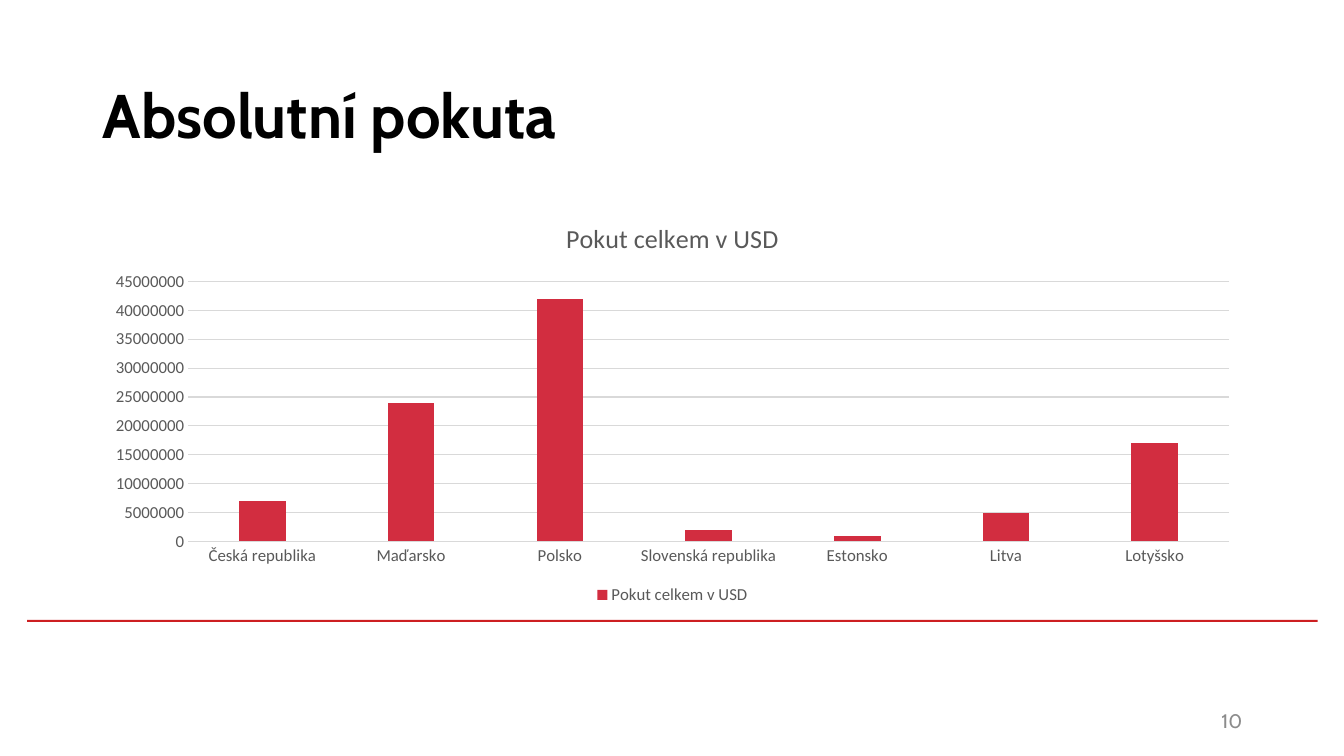
from pptx import Presentation
from pptx import util as u
from pptx.chart import data
from pptx.dml import color
from pptx.enum import chart as kinds, shapes, text

Inches, Pt = u.Inches, u.Pt


def rgb(code):
    return color.RGBColor.from_string(code)


class Deck:
    head, body = "Cabin", "Calibri"
    red, bar = "CD1F21", "D22D40"
    black, gray, pale, grid = "000000", "595959", "8C8C8C", "D9D9D9"

    def __init__(self):
        self.prs = Presentation()
        self.prs.slide_width = Inches(13.33)
        self.prs.slide_height = Inches(7.5)
        self.slide = self.prs.slides.add_slide(self.prs.slide_layouts[6])

    def font(self, font, size, code, name, bold=False):
        font.size, font.name, font.bold = Pt(size), name, bold
        font.color.rgb = rgb(code)

    def stroke(self, line):
        line.color.rgb = rgb(self.grid)
        line.width = Pt(0.75)

    def rule(self, *box):
        rule = self.slide.shapes.add_shape(
            shapes.MSO_SHAPE.RECTANGLE, *map(Inches, box))
        rule.shadow.inherit = False
        rule.fill.solid()
        rule.fill.fore_color.rgb = rgb(self.red)
        rule.line.fill.background()

    def label(self, words, box, size, code, bold=False, align=text.PP_ALIGN.LEFT):
        frame = self.slide.shapes.add_textbox(*map(Inches, box)).text_frame
        frame.word_wrap = True
        frame.vertical_anchor = text.MSO_ANCHOR.MIDDLE
        para = frame.paragraphs[0]
        para.text, para.alignment = words, align
        self.font(para.font, size, code, self.head, bold)

    def columns(self, title, values, box, top, step):
        table = data.CategoryChartData()
        table.categories = list(values)
        table.add_series(title, list(values.values()))
        chart = self.slide.shapes.add_chart(
            kinds.XL_CHART_TYPE.COLUMN_CLUSTERED, *map(Inches, box), table).chart
        self.font(chart.font, 10, self.black, self.body)

        para = chart.chart_title.text_frame.paragraphs[0]
        para.text = title
        self.font(para.font, 18.6, self.gray, self.body)
        chart.chart_title.include_in_layout = False

        chart.has_legend = True
        chart.legend.position = kinds.XL_LEGEND_POSITION.BOTTOM
        chart.legend.include_in_layout = False
        self.font(chart.legend.font, 12, self.gray, self.body)

        for axis in (chart.category_axis, chart.value_axis):
            axis.major_tick_mark = axis.minor_tick_mark = kinds.XL_TICK_MARK.NONE
            self.font(axis.tick_labels.font, 12, self.gray, self.body)
        self.stroke(chart.category_axis.format.line)
        scale = chart.value_axis
        scale.minimum_scale, scale.maximum_scale, scale.major_unit = 0, top, step
        scale.format.line.fill.background()
        scale.has_major_gridlines = True
        self.stroke(scale.major_gridlines.format.line)

        plot = chart.plots[0]
        plot.gap_width, plot.overlap = 219, -27
        plot.vary_by_categories = False
        fill = plot.series[0].format.fill
        fill.solid()
        fill.fore_color.rgb = rgb(self.bar)


def main():
    deck = Deck()
    deck.rule(0.27, 6.15, 12.8, 0.02)
    deck.label("Absolutní pokuta", (0.92, 0.4, 11.5, 1.45), 44, deck.black, bold=True)
    fines = {
        "Česká republika": 7000000,
        "Maďarsko": 24000000,
        "Polsko": 42000000,
        "Slovenská republika": 2000000,
        "Estonsko": 1000000,
        "Litva": 5000000,
        "Lotyšsko": 17000000,
    }
    deck.columns("Pokut celkem v USD", fines, (0.92, 2, 11.5, 4.04), 45000000, 5000000)
    deck.label("10", (9.42, 6.95, 3, 0.4), 14, deck.pale, align=text.PP_ALIGN.RIGHT)
    deck.prs.save("out.pptx")


if __name__ == "__main__":
    main()
